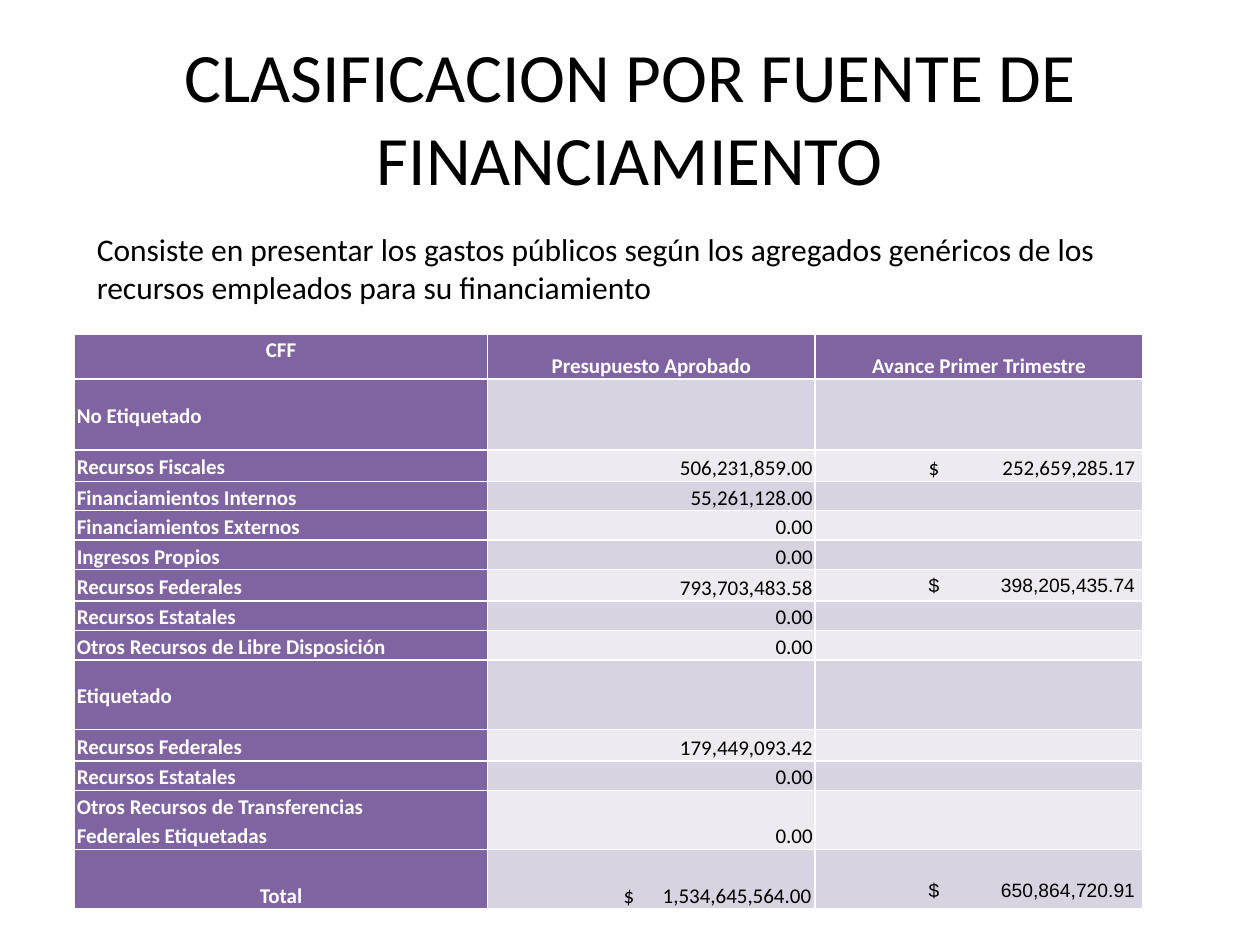
"""Builds the slide on spending classified by source of financing."""
from dataclasses import dataclass

from lxml.etree import SubElement
from pptx import Presentation
from pptx.dml.color import RGBColor
from pptx.enum.text import MSO_ANCHOR as Anchor, MSO_AUTO_SIZE as AutoSize, PP_ALIGN as Align
from pptx.oxml.ns import qn
from pptx.util import Inches, Pt

PURPLE, DARK_BAND, LIGHT_BAND = "8064A2", "D8D3E0", "EDEAF0"
WHITE, BLACK = "FFFFFF", "000000"
LINE_ROW, TALL_ROW, TWO_LINE_ROW = 0.23, 0.25, 0.47


@dataclass
class Source:
    label: str
    height: float
    budget: str = ""
    progress: str = ""


@dataclass
class CellFormat:
    fill: str
    color: str = BLACK
    bold: bool = False
    align: Align = Align.RIGHT
    anchor: Anchor = Anchor.BOTTOM
    size: float = 12
    font: str = "Calibri"
    spacing: float = 1.15
    top: float = 0
    tabs: tuple = ()


SOURCES = [
    Source("No Etiquetado", 0.56),
    Source("Recursos Fiscales", TALL_ROW, "506,231,859.00", "\t$\t252,659,285.17"),
    Source("Financiamientos Internos", LINE_ROW, "55,261,128.00"),
    Source("Financiamientos Externos", LINE_ROW, "0.00"),
    Source("Ingresos Propios", LINE_ROW, "0.00"),
    Source("Recursos Federales", TALL_ROW, "793,703,483.58", "\t$\t398,205,435.74"),
    Source("Recursos Estatales", LINE_ROW, "0.00"),
    Source("Otros Recursos de Libre Disposición", LINE_ROW, "0.00"),
    Source("Etiquetado", 0.55),
    Source("Recursos Federales", TALL_ROW, "179,449,093.42"),
    Source("Recursos Estatales", LINE_ROW, "0.00"),
    Source("Otros Recursos de Transferencias\nFederales Etiquetadas", TWO_LINE_ROW, "0.00"),
    Source("Total", TWO_LINE_ROW, "\t$\t1,534,645,564.00", "\t$\t650,864,720.91"),
]


def rgb(value: str) -> RGBColor:
    """Turn a hex string into a colour."""
    return RGBColor.from_string(value)


def apply(target, values: dict) -> None:
    """Set every attribute named in the dict."""
    for name, value in values.items():
        setattr(target, name, value)


def place(shape, left: float, top: float, width: float, height: float) -> None:
    """Position a shape in inches."""
    apply(shape, dict(left=Inches(left), top=Inches(top),
                      width=Inches(width), height=Inches(height)))


def write(paragraph, text: str, size: float, color: str = BLACK,
          bold: bool = False, font: str = "Calibri") -> None:
    """Add one formatted run to a paragraph."""
    run = paragraph.add_run()
    run.text = text
    apply(run.font, dict(size=Pt(size), name=font, bold=bold))
    run.font.color.rgb = rgb(color)


def add_tabs(paragraph, symbol_at: float, amount_at: float) -> None:
    """Set a left stop for the currency symbol and a right stop for the amount."""
    stops = SubElement(paragraph._p.get_or_add_pPr(), qn("a:tabLst"))
    for position, side in ((symbol_at, "l"), (amount_at, "r")):
        SubElement(stops, qn("a:tab"), pos=str(Inches(position)), algn=side)


def fill_cell(cell, text: str, style: CellFormat) -> None:
    """Fill and format one table cell."""
    cell.fill.solid()
    cell.fill.fore_color.rgb = rgb(style.fill)
    apply(cell, dict(margin_left=Inches(0.02), margin_right=Inches(0.02),
                     margin_top=Inches(style.top), margin_bottom=0,
                     vertical_anchor=style.anchor))
    for index, line in enumerate(text.split("\n")):
        frame = cell.text_frame
        paragraph = frame.add_paragraph() if index else frame.paragraphs[0]
        apply(paragraph, dict(alignment=style.align, line_spacing=style.spacing))
        if style.tabs:
            paragraph.alignment = Align.LEFT
            add_tabs(paragraph, *style.tabs)
        if line:
            write(paragraph, line, style.size, style.color, style.bold, style.font)
        else:
            SubElement(paragraph._p, qn("a:endParaRPr"), sz="1100")


def add_title(slide) -> None:
    """Write the slide title."""
    title = slide.shapes.title
    place(title, 0.5, 0.3, 9, 1.25)
    apply(title.text_frame, dict(word_wrap=True, auto_size=AutoSize.NONE,
                                 vertical_anchor=Anchor.MIDDLE))
    heading = title.text_frame.paragraphs[0]
    heading.alignment = Align.CENTER
    write(heading, "CLASIFICACION POR FUENTE DE FINANCIAMIENTO", 39.6)


def add_budget_table(slide) -> None:
    """Draw the table of financing sources."""
    table = slide.shapes.add_table(
        len(SOURCES) + 1, 3, Inches(0.59), Inches(2.65), Inches(8.48), Inches(4.54)).table
    for column, width in zip(table.columns, (3.28, 2.6, 2.6)):
        column.width = Inches(width)
    for row, height in zip(table.rows, [0.36] + [source.height for source in SOURCES]):
        row.height = Inches(height)

    headers = ("CFF", "Presupuesto Aprobado", "Avance Primer Trimestre")
    for column, header in enumerate(headers):
        anchor = Anchor.BOTTOM if column else Anchor.TOP
        fill_cell(table.cell(0, column), header,
                  CellFormat(PURPLE, WHITE, True, Align.CENTER, anchor))

    for row, source in enumerate(SOURCES, start=1):
        band = DARK_BAND if row % 2 else LIGHT_BAND
        is_total = source.label == "Total"
        label = CellFormat(PURPLE, WHITE, True, Align.LEFT, Anchor.MIDDLE)
        budget, progress = CellFormat(band), CellFormat(band)
        if is_total:
            apply(label, dict(align=Align.CENTER, anchor=Anchor.BOTTOM))
            budget.tabs = (1.06, 2.55)
        if source.progress:
            progress.tabs = (0.88, 2.52)
            if source.label != "Recursos Fiscales":
                apply(progress, dict(size=11, font="Arial", spacing=1.0,
                                     anchor=Anchor.MIDDLE, top=0.18 if is_total else 0.01))
        cells = ((source.label, label), (source.budget, budget), (source.progress, progress))
        for column, (text, style) in enumerate(cells):
            fill_cell(table.cell(row, column), text, style)


def add_description(slide) -> None:
    """Write the explanation above the table."""
    description = slide.shapes.add_textbox(
        Inches(0.67), Inches(1.78), Inches(8.66), Inches(1.01))
    description.text_frame.word_wrap = True
    write(description.text_frame.paragraphs[0],
          "Consiste en presentar los gastos públicos según los agregados genéricos "
          "de los recursos empleados para su financiamiento", 18)


def main() -> None:
    """Build and save the presentation."""
    deck = Presentation()
    apply(deck, dict(slide_width=Inches(10), slide_height=Inches(7.5)))
    slide = deck.slides.add_slide(deck.slide_layouts[5])
    add_title(slide)
    add_budget_table(slide)
    add_description(slide)
    deck.save("out.pptx")


if __name__ == "__main__":
    main()
